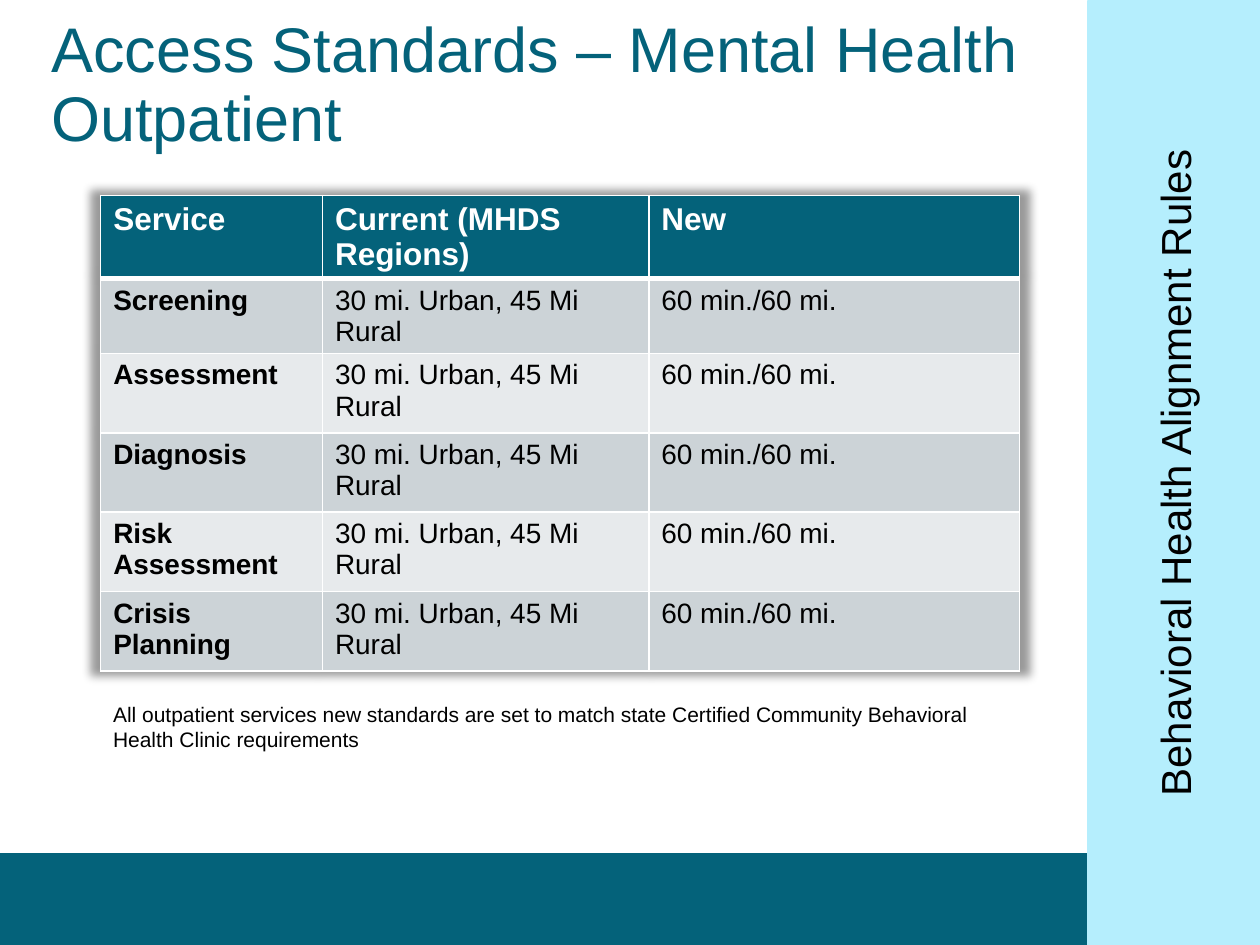
from dataclasses import dataclass

from lxml.etree import SubElement
from pptx import Presentation
from pptx.dml.color import RGBColor
from pptx.enum.text import MSO_ANCHOR, PP_ALIGN
from pptx.oxml import parse_xml
from pptx.oxml.ns import nsdecls, qn
from pptx.util import Cm, Pt


@dataclass(frozen=True)
class Theme:
    font: str = "Arial"
    teal: str = "04627A"
    green: str = "C6D668"
    sky: str = "B5EEFD"
    white: str = "FFFFFF"
    black: str = "000000"
    dark_row: str = "CCD3D7"
    light_row: str = "E7EAEC"
    heading_size: int = 36
    sidebar_size: int = 24
    header_size: int = 18
    body_size: int = 16
    note_size: int = 12


theme = Theme()


def write_text(text_frame, text, size, color, bold=False):
    text_frame.word_wrap = True
    paragraph = text_frame.paragraphs[0]
    run = paragraph.add_run()
    run.text = text
    formats = {"name": theme.font, "size": Pt(size), "bold": bold}
    for name, value in formats.items():
        setattr(run.font, name, value)
    run.font.color.rgb = RGBColor.from_string(color)
    return paragraph


def add_border(cell, side, width):
    line = SubElement(cell._tc.get_or_add_tcPr(), qn(f"a:{side}"), w=str(Pt(width)))
    fill = SubElement(line, qn("a:solidFill"))
    SubElement(fill, qn("a:srgbClr"), val=theme.white)


presentation = Presentation()
presentation.slide_width, presentation.slide_height = Cm(25.4), Cm(19.05)
slide = presentation.slides.add_slide(presentation.slide_layouts[5])
sidebar = slide.shapes.title

# Footer bands, behind the sidebar
bands = [
    (theme.green, [(22.4, 17.12), (21.9, 17.37), (25.4, 18.06), (25.4, 17.75),
                   (25.02, 17.32), (24.1, 17.25), (23.44, 17.07), (22.83, 17.15)]),
    (theme.teal, [(0, 17.2), (22.05, 17.2), (23.04, 17.27), (24.13, 17.42),
                  (24.84, 17.7), (25.4, 17.96), (25.4, 19.05), (0, 19.05)]),
]
for color, points in bands:
    start, *others = [(Cm(x), Cm(y)) for x, y in points]
    builder = slide.shapes.build_freeform(*start)
    builder.add_line_segments(others, close=True)
    band = builder.convert_to_shape()
    band.shadow.inherit = False
    band.fill.solid()
    band.fill.fore_color.rgb = RGBColor.from_string(color)
    band.line.fill.background()
    sidebar._element.addprevious(band._element)

# Sidebar title, turned to read upwards
placement = {"left": Cm(14.15), "top": Cm(7.8), "width": Cm(19.05),
             "height": Cm(3.48), "rotation": 270}
for name, value in placement.items():
    setattr(sidebar, name, value)
sidebar.fill.solid()
sidebar.fill.fore_color.rgb = RGBColor.from_string(theme.sky)
sidebar.line.color.rgb = RGBColor.from_string(theme.sky)
sidebar.line.width = Pt(1)
sidebar.text_frame.vertical_anchor = MSO_ANCHOR.MIDDLE
paragraph = write_text(sidebar.text_frame, "Behavioral Health Alignment Rules",
                       theme.sidebar_size, theme.black)
paragraph.alignment = PP_ALIGN.CENTER

# Access standards table
services = ["Screening", "Assessment", "Diagnosis", "Risk Assessment", "Crisis Planning"]
rows = [("Service", "Current (MHDS Regions)", "New")]
rows += [(service, "30 mi. Urban, 45 Mi Rural", "60 min./60 mi.") for service in services]
column_widths = [4.47, 6.58, 7.47]
row_heights = [1.6, 1.47, 1.6, 1.6, 1.6, 1.6]
table = slide.shapes.add_table(len(rows), len(column_widths), Cm(2.03), Cm(3.94),
                               Cm(sum(column_widths)), Cm(sum(row_heights))).table
for column, width in zip(table.columns, column_widths):
    column.width = Cm(width)
for row, height in zip(table.rows, row_heights):
    row.height = Cm(height)

for row_index, texts in enumerate(rows):
    header = row_index == 0
    row_fill = theme.dark_row if row_index % 2 else theme.light_row
    for column_index, text in enumerate(texts):
        cell = table.cell(row_index, column_index)
        for side in ("lnL", "lnR", "lnT", "lnB"):
            header_rule = (side == "lnB" and header) or (side == "lnT" and row_index == 1)
            add_border(cell, side, 3 if header_rule else 1)
        cell.fill.solid()
        cell.fill.fore_color.rgb = RGBColor.from_string(theme.teal if header else row_fill)
        write_text(cell.text_frame, text,
                   theme.header_size if header else theme.body_size,
                   theme.white if header else theme.black,
                   bold=header or column_index == 0)

# Soft shadow around the table
table._tbl.tblPr.insert(0, parse_xml(
    f'<a:effectLst {nsdecls("a")}><a:outerShdw blurRad="63500" sx="102000" sy="102000" '
    f'algn="ctr" rotWithShape="0"><a:srgbClr val="{theme.black}">'
    '<a:alpha val="40000"/></a:srgbClr></a:outerShdw></a:effectLst>'))

# Note under the table
note = slide.shapes.add_textbox(Cm(2.03), Cm(14.02), Cm(18.26), Cm(1.28))
write_text(note.text_frame,
           "All outpatient services new standards are set to match state "
           "Certified Community Behavioral Health Clinic requirements",
           theme.note_size, theme.black)

# Heading
heading = slide.shapes.add_textbox(Cm(0.79), Cm(0.25), Cm(22.05), Cm(2.87))
paragraph = write_text(heading.text_frame, "Access Standards – Mental Health Outpatient",
                       theme.heading_size, theme.teal)
paragraph.line_spacing = 0.9

presentation.save("out.pptx")
